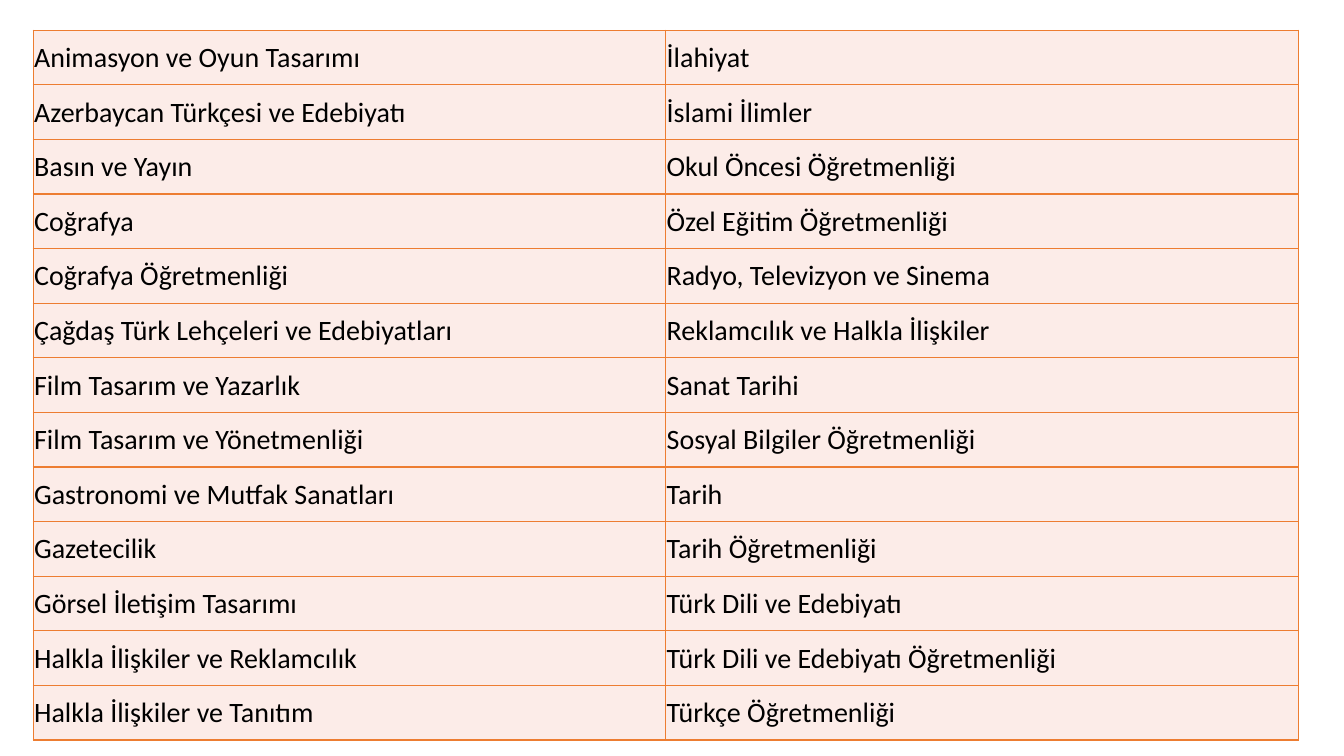
from lxml import etree
from pptx import Presentation
from pptx.dml.color import RGBColor
from pptx.enum.text import MSO_ANCHOR
from pptx.oxml.ns import qn
from pptx.util import Cm, Pt

MIDDLE = MSO_ANCHOR.MIDDLE
BLACK = RGBColor(0x00, 0x00, 0x00)
ORANGE = RGBColor(0xED, 0x7D, 0x31)
PALE_PINK = RGBColor(0xFC, 0xEC, 0xE8)

PROGRAMMES = [
    ("Animasyon ve Oyun Tasarımı", "İlahiyat"),
    ("Azerbaycan Türkçesi ve Edebiyatı", "İslami İlimler"),
    ("Basın ve Yayın", "Okul Öncesi Öğretmenliği"),
    ("Coğrafya", "Özel Eğitim Öğretmenliği"),
    ("Coğrafya Öğretmenliği", "Radyo, Televizyon ve Sinema"),
    ("Çağdaş Türk Lehçeleri ve Edebiyatları", "Reklamcılık ve Halkla İlişkiler"),
    ("Film Tasarım ve Yazarlık", "Sanat Tarihi"),
    ("Film Tasarım ve Yönetmenliği", "Sosyal Bilgiler Öğretmenliği"),
    ("Gastronomi ve Mutfak Sanatları", "Tarih"),
    ("Gazetecilik", "Tarih Öğretmenliği"),
    ("Görsel İletişim Tasarımı", "Türk Dili ve Edebiyatı"),
    ("Halkla İlişkiler ve Reklamcılık", "Türk Dili ve Edebiyatı Öğretmenliği"),
    ("Halkla İlişkiler ve Tanıtım", "Türkçe Öğretmenliği"),
]


def set_borders(cell, color, width):
    """Draw a solid line on all four sides; call before setting the fill."""
    tcPr = cell._tc.get_or_add_tcPr()
    for side in ("a:lnL", "a:lnR", "a:lnT", "a:lnB"):
        ln = etree.SubElement(tcPr, qn(side), w=str(width))
        fill = etree.SubElement(ln, qn("a:solidFill"))
        etree.SubElement(fill, qn("a:srgbClr"), val=str(color))


def format_cell(cell, text):
    set_borders(cell, ORANGE, Pt(1))
    cell.fill.solid()
    cell.fill.fore_color.rgb = PALE_PINK
    cell.vertical_anchor = MIDDLE
    cell.margin_left = cell.margin_right = cell.margin_top = Cm(0.02)
    cell.margin_bottom = 0
    p = cell.text_frame.paragraphs[0]
    p.text = text
    p.font.name = "Calibri"
    p.font.size = Pt(20)
    p.font.color.rgb = BLACK


def add_programme_table(slide, left, top, width, height):
    table = slide.shapes.add_table(
        len(PROGRAMMES), len(PROGRAMMES[0]), left, top, width, height).table
    table.first_row = False
    table.horz_banding = False
    for row, names in zip(table.rows, PROGRAMMES):
        for cell, name in zip(row.cells, names):
            format_cell(cell, name)


def main():
    prs = Presentation()
    prs.slide_width, prs.slide_height = Cm(33.87), Cm(19.05)
    slide = prs.slides.add_slide(prs.slide_layouts[6])
    add_programme_table(slide, Cm(0.84), Cm(0.76), Cm(31.88), Cm(17.9))
    prs.save("out.pptx")


if __name__ == "__main__":
    main()
